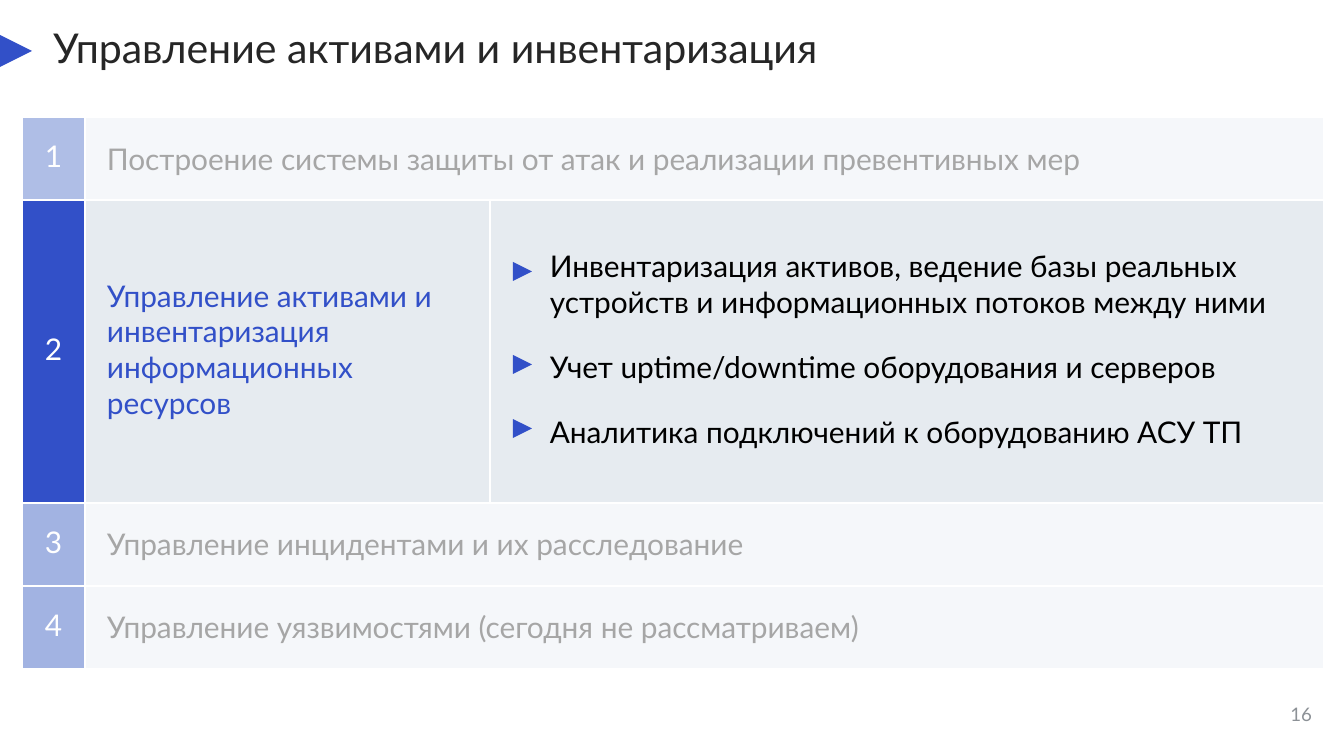
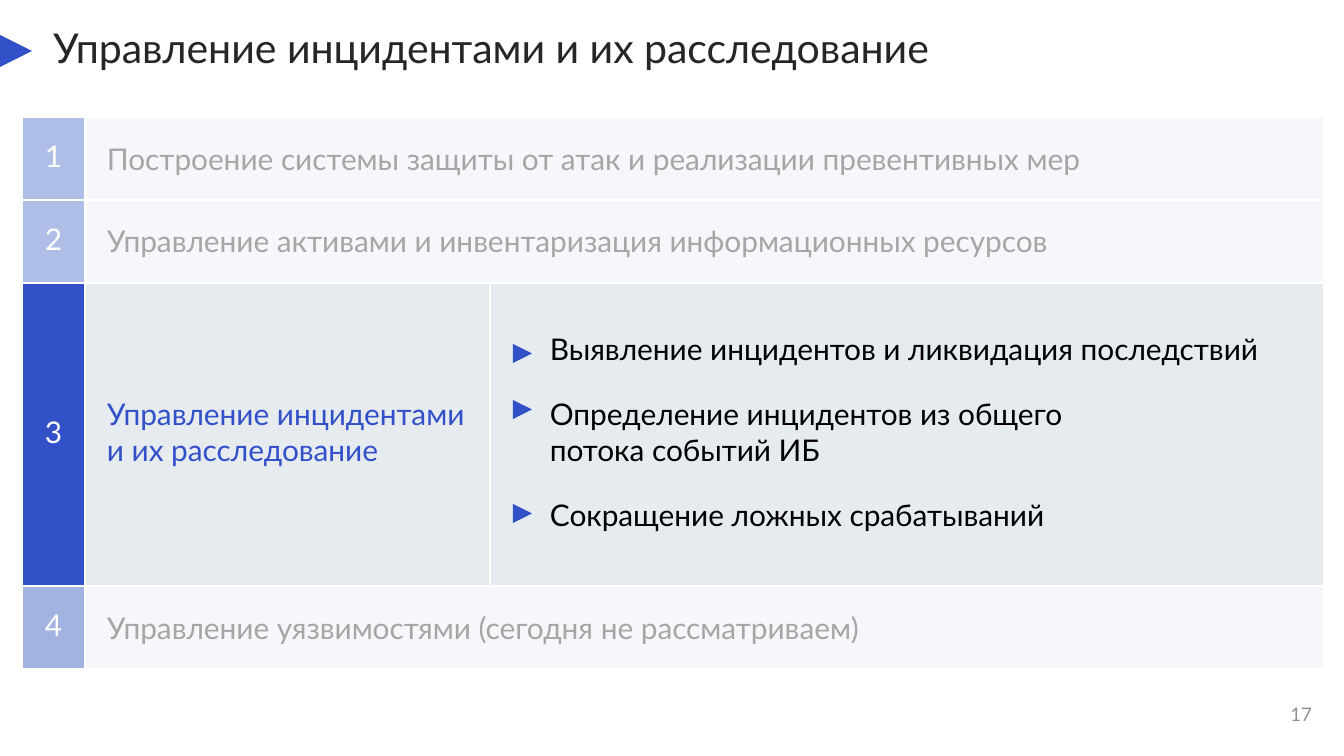
"""Builds two agenda slides, each opening one topic of the same numbered list."""
from lxml import etree
from pptx import Presentation
from pptx.dml.color import RGBColor
from pptx.enum.shapes import MSO_SHAPE
from pptx.enum.text import MSO_ANCHOR, MSO_AUTO_SIZE, PP_ALIGN
from pptx.oxml.ns import qn
from pptx.util import Emu, Pt

TRIANGLE = MSO_SHAPE.ISOSCELES_TRIANGLE
TOP, MIDDLE, BOTTOM = MSO_ANCHOR.TOP, MSO_ANCHOR.MIDDLE, MSO_ANCHOR.BOTTOM
LEFT, CENTER, RIGHT = PP_ALIGN.LEFT, PP_ALIGN.CENTER, PP_ALIGN.RIGHT

FONT = "Lato"
WHITE, BLACK, BLUE = "FFFFFF", "000000", "3250C8"
TITLE_INK, MUTED_INK, FOOTER_INK = "262626", "A6A6A6", "8C9196"
PAST, UPCOMING = "AFBEE6", "A2B3E2"
MUTED_FILL, OPEN_FILL = "F5F7FA", "E6EBF0"

TOPICS = [
    "Построение системы защиты от атак и реализации превентивных мер",
    "Управление активами и инвентаризация информационных ресурсов",
    "Управление инцидентами и их расследование",
    "Управление уязвимостями (сегодня не рассматриваем)",
]
SLIDES = [
    {
        "page": "16",
        "title": "Управление активами и инвентаризация",
        "open": 1,
        "label": ["Управление активами и инвентаризация информационных ресурсов"],
        "points": [
            ("Инвентаризация активов, ведение базы реальных устройств "
             "и информационных потоков между ними", 262),
            ("Учет uptime/downtime оборудования и серверов", 355),
            ("Аналитика подключений к оборудованию АСУ ТП", 419),
        ],
    },
    {
        "page": "17",
        "title": "Управление инцидентами и их расследование",
        "open": 2,
        "label": ["Управление инцидентами", "и их расследование"],
        "points": [
            ("Выявление инцидентов и ликвидация последствий", 344),
            ("Определение инцидентов из общего", 400),
            ("потока событий ИБ", None),
            ("Сокращение ложных срабатываний", 504),
        ],
    },
]

LIST_LEFT, LIST_TOP = 22, 117
ROW_HEIGHT, OPEN_HEIGHT = 83, 303
NUMBER_WIDTH, LABEL_WIDTH, POINTS_WIDTH = 63, 405, 834
CELL_PAD, CELL_BOTTOM, POINT_INDENT = 22, 5, 38
MARKER_LEFT, MARKER_SIZE = 513, 19


def px(length):
    """Turn pixels into EMU."""
    return Emu(round(length * 914400 / 134.4))


def color(value):
    """Turn a hex string into a colour."""
    return RGBColor.from_string(value)


def style(para, size, ink, align=LEFT):
    """Set the font and alignment of a paragraph."""
    para.alignment = align
    para.font.name = FONT
    para.font.size = Pt(size)
    para.font.bold = False
    para.font.color.rgb = color(ink)


def clear_margins(frame, anchor):
    """Give a text frame no insets, a fixed size and an anchor."""
    frame.margin_left = frame.margin_right = 0
    frame.margin_top = frame.margin_bottom = 0
    frame.word_wrap = True
    frame.auto_size = MSO_AUTO_SIZE.NONE
    frame.vertical_anchor = anchor


def add_pointer(page, left, top, size):
    """Add a blue triangle that points right."""
    pointer = page.shapes.add_shape(TRIANGLE, px(left), px(top), px(size), px(size))
    pointer.rotation = 90
    pointer.shadow.inherit = False
    pointer.fill.solid()
    pointer.fill.fore_color.rgb = color(BLUE)
    pointer.line.fill.background()


def add_frame(page, title, number):
    """Add what every slide shares: page number, pointer and title."""
    box = page.shapes.add_textbox(px(1259), px(672), px(53), px(53))
    clear_margins(box.text_frame, BOTTOM)
    box.text_frame.text = number
    style(box.text_frame.paragraphs[0], 10, FOOTER_INK, RIGHT)
    add_pointer(page, 0, 35, 32)
    heading = page.shapes.title
    heading.left, heading.top = px(53), px(27)
    heading.width, heading.height = px(984), px(95)
    heading.text_frame.text = title
    clear_margins(heading.text_frame, TOP)
    para = heading.text_frame.paragraphs[0]
    para.line_spacing = Pt(24)
    style(para, 22, TITLE_INK)


def fill_cell(cell, lines, ink, fill, pad=CELL_PAD, bottom=0, align=LEFT):
    """Write lines into a cell with white borders and a plain fill."""
    properties = cell._tc.get_or_add_tcPr()
    for side in ("a:lnL", "a:lnR", "a:lnT", "a:lnB"):
        border = etree.SubElement(properties, qn(side), w=str(Pt(1)))
        solid = etree.SubElement(border, qn("a:solidFill"))
        etree.SubElement(solid, qn("a:srgbClr"), val=WHITE)
    cell.fill.solid()
    cell.fill.fore_color.rgb = color(fill)
    cell.margin_left = cell.margin_right = px(pad)
    cell.margin_top, cell.margin_bottom = 0, px(bottom)
    cell.vertical_anchor = MIDDLE
    cell.text_frame.text = "\n".join(lines)
    for para in cell.text_frame.paragraphs:
        style(para, 16, ink, align)


def add_table(page, top, widths, height, count):
    """Add an unstyled table with the given columns and equal rows."""
    frame = page.shapes.add_table(count, len(widths), px(LIST_LEFT), px(top),
                                  px(sum(widths)), px(height * count))
    table = frame.table
    table.first_row = table.horz_banding = False
    for column, width in zip(table.columns, widths):
        column.width = px(width)
    for row in table.rows:
        row.height = px(height)
    return table


def number_cell(cell, index, fill):
    """Fill the cell that holds the number of a topic."""
    fill_cell(cell, [str(index + 1)], WHITE, fill, 0, CELL_BOTTOM, CENTER)


def add_closed_topics(page, top, indexes, fill):
    """Add a table of muted topics."""
    widths = (NUMBER_WIDTH, LABEL_WIDTH + POINTS_WIDTH)
    table = add_table(page, top, widths, ROW_HEIGHT, len(indexes))
    for row, index in enumerate(indexes):
        number_cell(table.cell(row, 0), index, fill)
        fill_cell(table.cell(row, 1), [TOPICS[index]], MUTED_INK, MUTED_FILL)


def add_open_topic(page, top, index, label, points):
    """Add the table of the current topic with its points."""
    widths = (NUMBER_WIDTH, LABEL_WIDTH, POINTS_WIDTH)
    table = add_table(page, top, widths, OPEN_HEIGHT, 1)
    number_cell(table.cell(0, 0), index, BLUE)
    fill_cell(table.cell(0, 1), label, BLUE, OPEN_FILL, bottom=CELL_BOTTOM)
    cell = table.cell(0, 2)
    fill_cell(cell, [text for text, _ in points], BLACK, OPEN_FILL, bottom=CELL_BOTTOM)
    for position, para in enumerate(cell.text_frame.paragraphs):
        properties = para._p.get_or_add_pPr()
        properties.set("marL", str(px(POINT_INDENT)))
        properties.set("indent", "0")
        if position and points[position][1]:
            para.line_spacing = 1.5
            para.space_before = Pt(6)


def add_topic_slide(deck, content):
    """Add one slide with its current topic opened."""
    page = deck.slides.add_slide(deck.slide_layouts[5])
    add_frame(page, content["title"], content["page"])
    current = content["open"]
    open_top = LIST_TOP + current * ROW_HEIGHT
    add_closed_topics(page, open_top + OPEN_HEIGHT,
                      range(current + 1, len(TOPICS)), UPCOMING)
    add_open_topic(page, open_top, current, content["label"], content["points"])
    add_closed_topics(page, LIST_TOP, range(current), PAST)
    for _, marker_top in content["points"]:
        if marker_top:
            add_pointer(page, MARKER_LEFT, marker_top, MARKER_SIZE)


def main():
    """Build and save the deck."""
    deck = Presentation()
    deck.slide_width, deck.slide_height = px(1344), px(756)
    for content in SLIDES:
        add_topic_slide(deck, content)
    deck.save("out.pptx")


if __name__ == "__main__":
    main()
